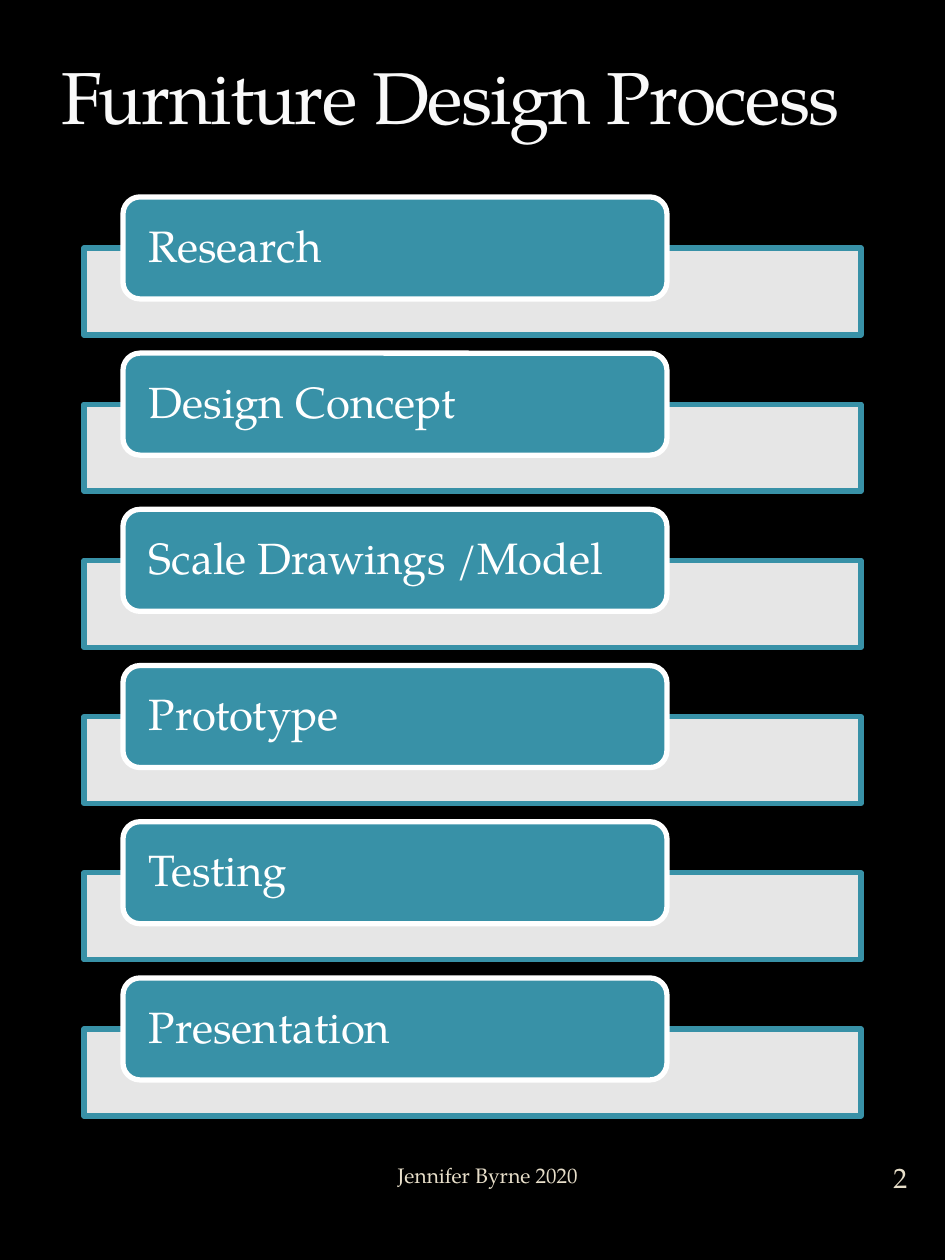
"""Builds the furniture design process slide."""
from lxml import etree
from pptx import Presentation, util as u
from pptx.dml.color import RGBColor
from pptx.enum import shapes, text
from pptx.oxml.ns import qn

TITLE = "Furniture Design Process"
STEPS = ["Research", "Design Concept", "Scale Drawings /Model",
         "Prototype", "Testing", "Presentation"]
NOTES = [
    ("2", (869, 1135, 63, 84), 16, text.PP_ALIGN.CENTER, 0),
    ("Jennifer Byrne 2020", (220, 1140, 371, 71), 12, text.PP_ALIGN.RIGHT, 13),
]
HUES = {"back": "000000", "title": "F9F9F9", "teal": "3891A7",
        "white": "FFFFFF", "note": "E7DEC9"}
FACE = "TeX Gyre Pagella"
FIRST, LAST, DROP = 197, 978, 51


def px(num):
    return u.Inches(num / 126)


def hue(name):
    return RGBColor.from_string(HUES[name])


def write(shape, words, size, color, align, anchor, side):
    frame = shape.text_frame
    frame.text = words
    frame.word_wrap = True
    frame.auto_size = text.MSO_AUTO_SIZE.NONE
    frame.vertical_anchor = anchor
    frame.margin_left = frame.margin_right = px(side)
    para = frame.paragraphs[0]
    para.alignment = align
    para.font.name = FACE
    para.font.size = u.Pt(size)
    para.font.color.rgb = hue(color)
    return para


def block(slide, kind, box, fill, line):
    shape = slide.shapes.add_shape(kind, *map(px, box))
    shape.shadow.inherit = False
    shape.fill.solid()
    shape.fill.fore_color.rgb = hue(fill)
    shape.line.color.rgb = hue(line)
    shape.line.width = u.Pt(3)
    return shape


def main():
    deck = Presentation()
    deck.slide_width, deck.slide_height = px(945), px(1260)
    slide = deck.slides.add_slide(deck.slide_layouts[5])
    slide.background.fill.solid()
    slide.background.fill.fore_color.rgb = hue("back")
    left, mid = text.PP_ALIGN.LEFT, text.MSO_ANCHOR.MIDDLE

    head = slide.shapes.title
    head.left, head.top, head.width, head.height = map(px, (48, 28, 851, 118))
    para = write(head, TITLE, 42, "title", left, text.MSO_ANCHOR.BOTTOM, 13)
    para.runs[0].font._element.set("spc", "-100")

    gap = (LAST - FIRST) / (len(STEPS) - 1)
    for i, step in enumerate(STEPS):
        top = FIRST + i * gap
        bar = block(slide, shapes.MSO_SHAPE.RECTANGLE,
                    (84, top + DROP, 777, 87), "white", "teal")
        tint = bar._element.spPr.find(qn("a:solidFill"))[0]
        etree.SubElement(tint, qn("a:alpha"), val="90000")
        card = block(slide, shapes.MSO_SHAPE.ROUNDED_RECTANGLE,
                     (123, top, 544, 102), "teal", "white")
        para = write(card, step, 25, "white", left, mid, 21)
        para.line_spacing = 0.9

    for words, box, size, align, side in NOTES:
        note = slide.shapes.add_textbox(*map(px, box))
        write(note, words, size, "note", align, mid, side)

    deck.save("out.pptx")


if __name__ == "__main__":
    main()
